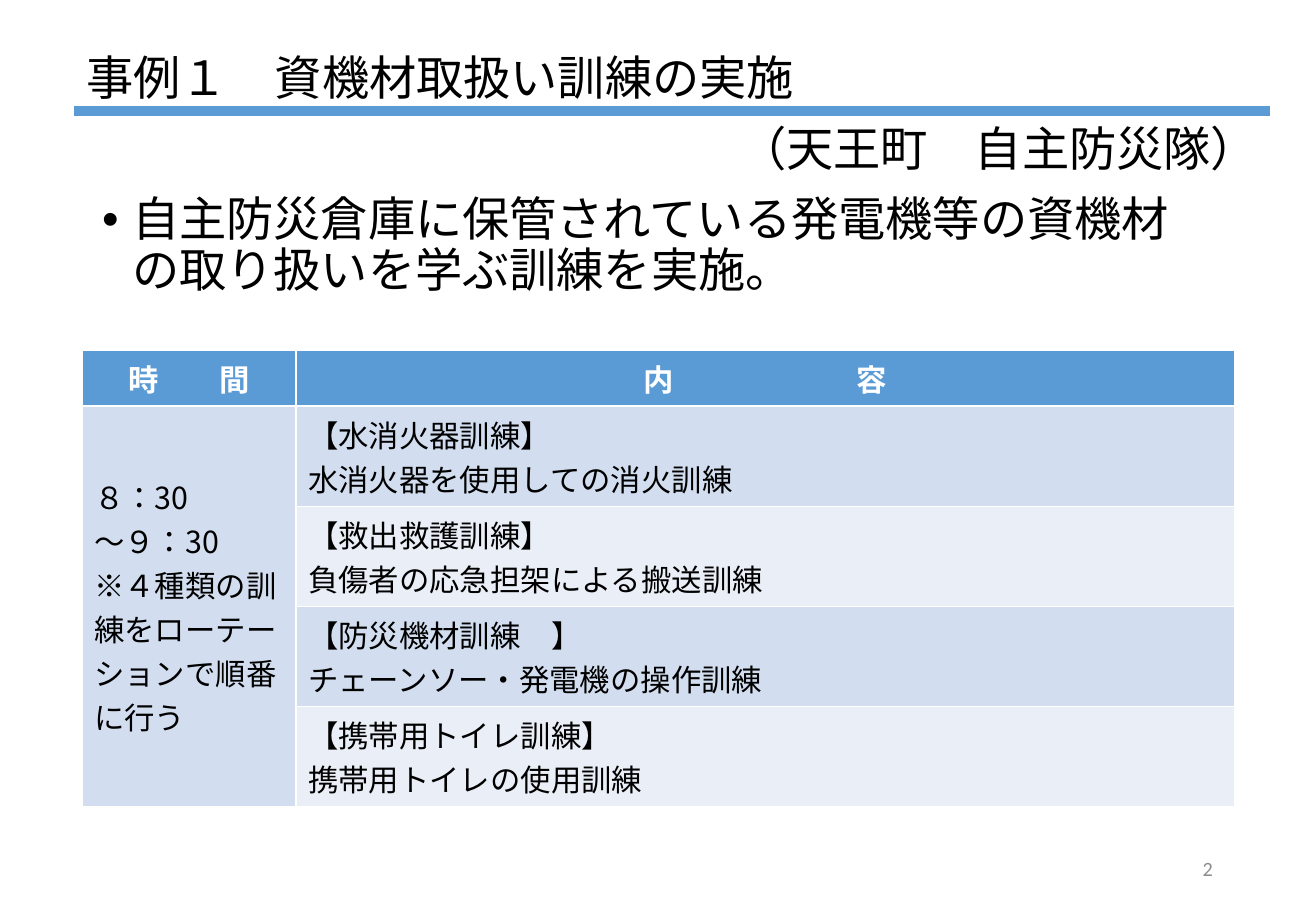
from lxml.etree import SubElement
from pptx import Presentation
from pptx.dml.color import RGBColor
from pptx.enum.lang import MSO_LANGUAGE_ID as Lang
from pptx.enum.shapes import MSO_CONNECTOR as Link
from pptx.enum.text import MSO_ANCHOR as Anchor, MSO_AUTO_SIZE as Fit, PP_ALIGN as Align
from pptx.oxml.ns import qn
from pptx.util import Pt

SCALE = 914400 / 121.5
FONT = "Noto Sans CJK JP"
BLUE, PALE, LIGHT = "5B9BD5", "D2DEEF", "EAEFF7"
rgb = RGBColor.from_string


def px(n):
    """Turn pixels into EMU."""
    return round(n * SCALE)


def write(frame, lines, size=28, color="000000", font=FONT, bold=False, **form):
    """Fill a text frame, one paragraph a line; form holds paragraph values."""
    frame.text = "\n".join(lines)
    look = dict(size=Pt(size), name=font, bold=bold, language_id=Lang.JAPANESE)
    for para in frame.paragraphs:
        for key, val in form.items():
            setattr(para, key, val)
        for run in para.runs:
            for key, val in look.items():
                setattr(run.font, key, val)
            run.font.color.rgb = rgb(color)
            SubElement(run.font._element, qn("a:ea"), typeface=font)


deck = Presentation()
deck.slide_width, deck.slide_height = px(1316), px(911)
slide = deck.slides.add_slide(deck.slide_layouts[1])
shapes = slide.shapes

# Title, body, group name and page number
title, body = slide.placeholders
group = shapes.add_textbox(0, 0, 0, 0)
page = shapes.add_textbox(0, 0, 0, 0)
left = dict(alignment=Align.LEFT, line_spacing=0.9)
right = dict(alignment=Align.RIGHT, line_spacing=0.9)
small = dict(size=12, color="8C8C8C", font="Calibri", alignment=Align.RIGHT)
texts = [
    (title, (74, 46, 1135, 68), Anchor.MIDDLE, "事例１　資機材取扱い訓練の実施", left),
    (body, (90, 190, 1135, 128), Anchor.TOP,
     "自主防災倉庫に保管されている発電機等の資機材の取り扱いを学ぶ訓練を実施。",
     dict(left, space_before=Pt(10))),
    (group, (135, 117, 1135, 68), Anchor.MIDDLE, "（天王町　自主防災隊）", right),
    (page, (929, 844, 296, 49), Anchor.MIDDLE, "2", small),
]
for shape, box, anchor, text, form in texts:
    shape.left, shape.top, shape.width, shape.height = map(px, box)
    frame = shape.text_frame
    frame.word_wrap, frame.auto_size = True, Fit.NONE
    frame.vertical_anchor = anchor
    write(frame, [text], **form)

props = body.text_frame.paragraphs[0]._p.get_or_add_pPr()
props.set("marL", str(px(30)))
props.set("indent", str(px(-30)))
SubElement(props, qn("a:buFont"), typeface="Arial")
SubElement(props, qn("a:buChar"), char="•")

# Rule under the title
rule = shapes.add_connector(Link.STRAIGHT, px(74), px(111), px(1270), px(111))
rule.line.color.rgb = rgb(BLUE)
rule.line.width = Pt(5.75)
SubElement(rule._element.spPr, qn("a:effectLst"))

# Timetable
heads = ["時　　間", "内　　　　　　容"]
time = ["８：30", "～９：30", "※４種類の訓練をローテーションで順番に行う"]
drills = [
    ["【水消火器訓練】", "水消火器を使用しての消火訓練"],
    ["【救出救護訓練】", "負傷者の応急担架による搬送訓練"],
    ["【防災機材訓練　】", "チェーンソー・発電機の操作訓練"],
    ["【携帯用トイレ訓練】", "携帯用トイレの使用訓練"],
]
table = shapes.add_table(5, 2, px(82), px(350), px(1153), px(456)).table
for col, width in zip(table.columns, (214, 939)):
    col.width = px(width)
for row, height in zip(table.rows, [56] + [100] * 4):
    row.height = px(height)

table.cell(1, 0).merge(table.cell(4, 0))
cells = [(0, i, [head], BLUE) for i, head in enumerate(heads)]
cells.append((1, 0, time, PALE))
cells += [(i, 1, drill, PALE if i % 2 else LIGHT) for i, drill in enumerate(drills, 1)]
for row, col, lines, fill in cells:
    cell = table.cell(row, col)
    cell.fill.solid()
    cell.fill.fore_color.rgb = rgb(fill)
    cell.vertical_anchor = Anchor.MIDDLE if lines is time else Anchor.TOP
    form = {} if row else dict(color="FFFFFF", bold=True, alignment=Align.CENTER)
    write(cell.text_frame, lines, size=18, **form)

deck.save("out.pptx")
